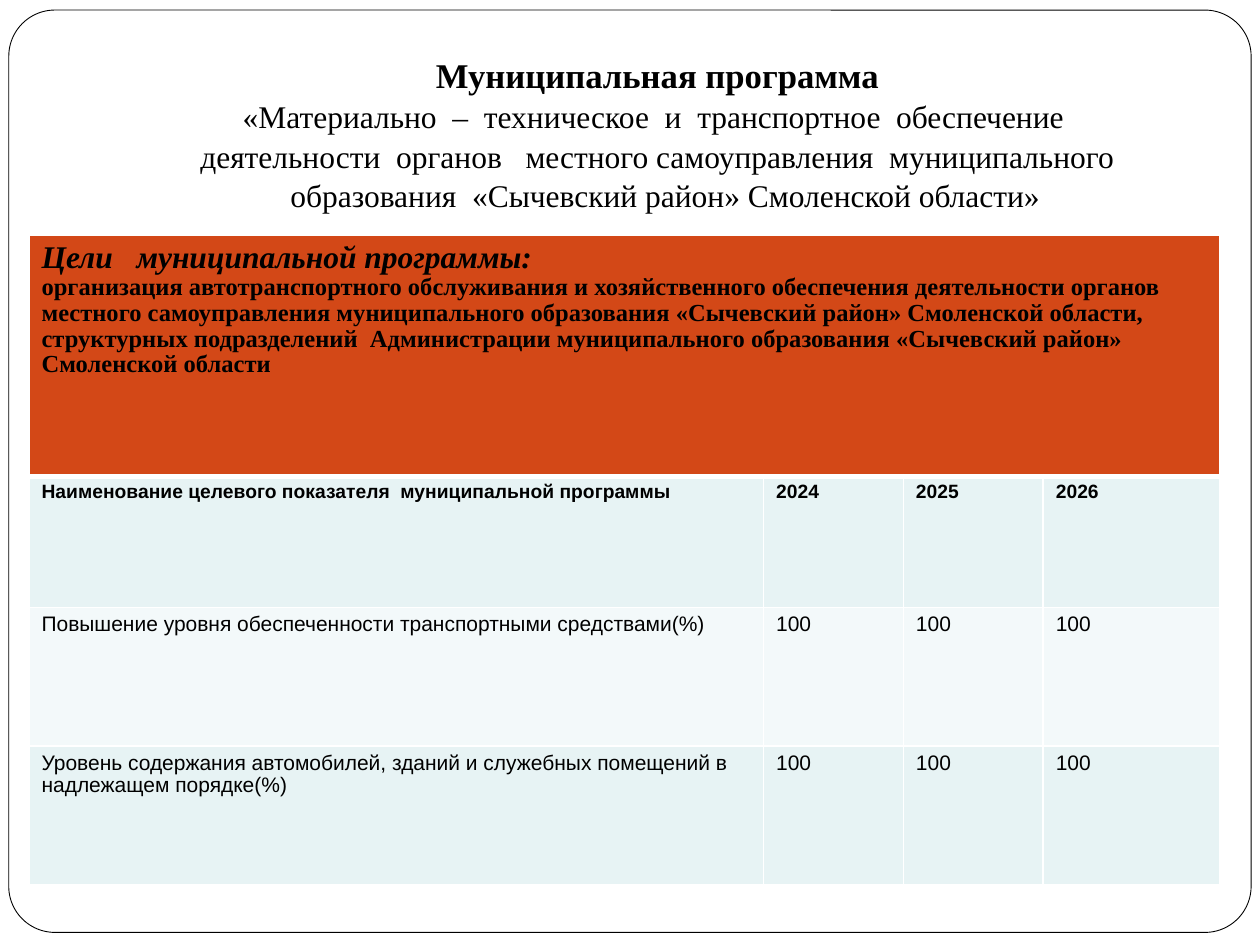
from lxml import etree
from pptx import Presentation
from pptx.dml.color import RGBColor
from pptx.enum.shapes import MSO_SHAPE
from pptx.enum.text import MSO_ANCHOR, MSO_AUTO_SIZE, PP_ALIGN
from pptx.oxml.ns import qn
from pptx.util import Inches, Pt

ROUNDED = MSO_SHAPE.ROUNDED_RECTANGLE
BOTTOM = MSO_ANCHOR.BOTTOM
NO_AUTOFIT = MSO_AUTO_SIZE.NONE
CENTER = PP_ALIGN.CENTER

BLACK = RGBColor(0x00, 0x00, 0x00)
WHITE = RGBColor(0xFF, 0xFF, 0xFF)
ORANGE = RGBColor(0xD3, 0x48, 0x17)
PALE_TEAL = RGBColor(0xE7, 0xF3, 0xF4)
PALE_BLUE = RGBColor(0xF3, 0xF9, 0xFA)

SERIF = "Times New Roman"
SANS = "Arial"

TITLE_LINES = [
    "Муниципальная программа ",
    "«Материально  –  техническое  и  транспортное  обеспечение  ",
    "деятельности  органов   местного самоуправления  муниципального ",
    " образования  «Сычевский район» Смоленской области»",
]
GOAL_HEADING = "Цели   муниципальной программы:"
GOAL_TEXT = (
    "организация автотранспортного обслуживания и хозяйственного обеспечения "
    "деятельности органов местного самоуправления муниципального образования "
    "«Сычевский район» Смоленской области, структурных подразделений  "
    "Администрации муниципального образования «Сычевский район» Смоленской области"
)
INDICATORS = [
    ["Наименование целевого показателя  муниципальной программы", "2024", "2025", "2026"],
    ["Повышение уровня обеспеченности транспортными средствами(%)", "100", "100", "100"],
    ["Уровень содержания автомобилей, зданий и служебных помещений в "
     "надлежащем порядке(%)", "100", "100", "100"],
]
COLUMN_WIDTHS = [5.83, 1.11, 1.11, 1.4]
ROW_HEIGHTS = [1.91, 1.04, 1.1, 1.1]


def set_font(font, name, size, bold=False, italic=False):
    font.name = name
    font.size = Pt(size)
    font.bold = bold
    font.italic = italic
    font.color.rgb = BLACK


def add_frame(slide, left, top, width, height):
    frame = slide.shapes.add_shape(
        ROUNDED, Inches(left), Inches(top), Inches(width), Inches(height))
    frame.adjustments[0] = 0.05
    frame.shadow.inherit = False
    frame.fill.solid()
    frame.fill.fore_color.rgb = WHITE
    frame.line.color.rgb = BLACK
    frame.line.width = Pt(0.5)
    slide.shapes._spTree.insert(2, frame._element)


def fill_title(slide, left, top, width, height):
    title = slide.shapes.title
    title.left, title.top = Inches(left), Inches(top)
    title.width, title.height = Inches(width), Inches(height)
    text_frame = title.text_frame
    text_frame.word_wrap = True
    text_frame.auto_size = NO_AUTOFIT
    text_frame.vertical_anchor = BOTTOM
    text_frame.margin_bottom = Inches(0.1)
    paragraph = text_frame.paragraphs[0]
    paragraph.alignment = CENTER
    paragraph.line_spacing = 1.05
    for index, line in enumerate(TITLE_LINES):
        if index:
            paragraph.add_line_break()
        run = paragraph.add_run()
        run.text = line
        set_font(run.font, SERIF, 18 if index else 19.8, bold=index == 0)


def set_borders(cell, top=1, bottom=1):
    properties = cell._tc.get_or_add_tcPr()
    widths = {"a:lnL": 1, "a:lnR": 1, "a:lnT": top, "a:lnB": bottom}
    for position, (tag, width) in enumerate(widths.items()):
        line = etree.Element(qn(tag), w=str(Pt(width)))
        fill = etree.SubElement(line, qn("a:solidFill"))
        etree.SubElement(fill, qn("a:srgbClr"), val=str(WHITE))
        properties.insert(position, line)


def set_cell_fill(cell, color):
    cell.fill.solid()
    cell.fill.fore_color.rgb = color


def write_paragraph(paragraph, text, name, size, bold=False, italic=False):
    paragraph.text = text
    paragraph.line_spacing = 0.95
    set_font(paragraph.font, name, size, bold, italic)


def add_program_table(slide, left, top):
    table = slide.shapes.add_table(
        len(ROW_HEIGHTS), len(COLUMN_WIDTHS), Inches(left), Inches(top),
        Inches(sum(COLUMN_WIDTHS)), Inches(sum(ROW_HEIGHTS))).table
    for column, width in zip(table.columns, COLUMN_WIDTHS):
        column.width = Inches(width)
    for row, height in zip(table.rows, ROW_HEIGHTS):
        row.height = Inches(height)

    for cell in table.rows[0].cells:
        set_cell_fill(cell, ORANGE)
        set_borders(cell, bottom=3)
    goal = table.cell(0, 0)
    goal.merge(table.cell(0, len(COLUMN_WIDTHS) - 1))
    write_paragraph(goal.text_frame.paragraphs[0], GOAL_HEADING, SERIF, 18, True, True)
    write_paragraph(goal.text_frame.add_paragraph(), GOAL_TEXT, SERIF, 14, True)

    for row_index, values in enumerate(INDICATORS, start=1):
        is_header = row_index == 1
        for column_index, value in enumerate(values):
            cell = table.cell(row_index, column_index)
            set_cell_fill(cell, PALE_TEAL if row_index % 2 else PALE_BLUE)
            set_borders(cell, top=3 if is_header else 1)
            write_paragraph(cell.text_frame.paragraphs[0], value, SANS,
                            11 if is_header else 12, is_header)


def main():
    presentation = Presentation()
    presentation.slide_width = Inches(10)
    presentation.slide_height = Inches(7.5)
    slide = presentation.slides.add_slide(presentation.slide_layouts[5])
    add_frame(slide, 0.07, 0.08, 9.86, 7.32)
    fill_title(slide, 1, 0.3, 8.5, 1.5)
    add_program_table(slide, 0.23, 1.87)
    presentation.save("out.pptx")


if __name__ == "__main__":
    main()
